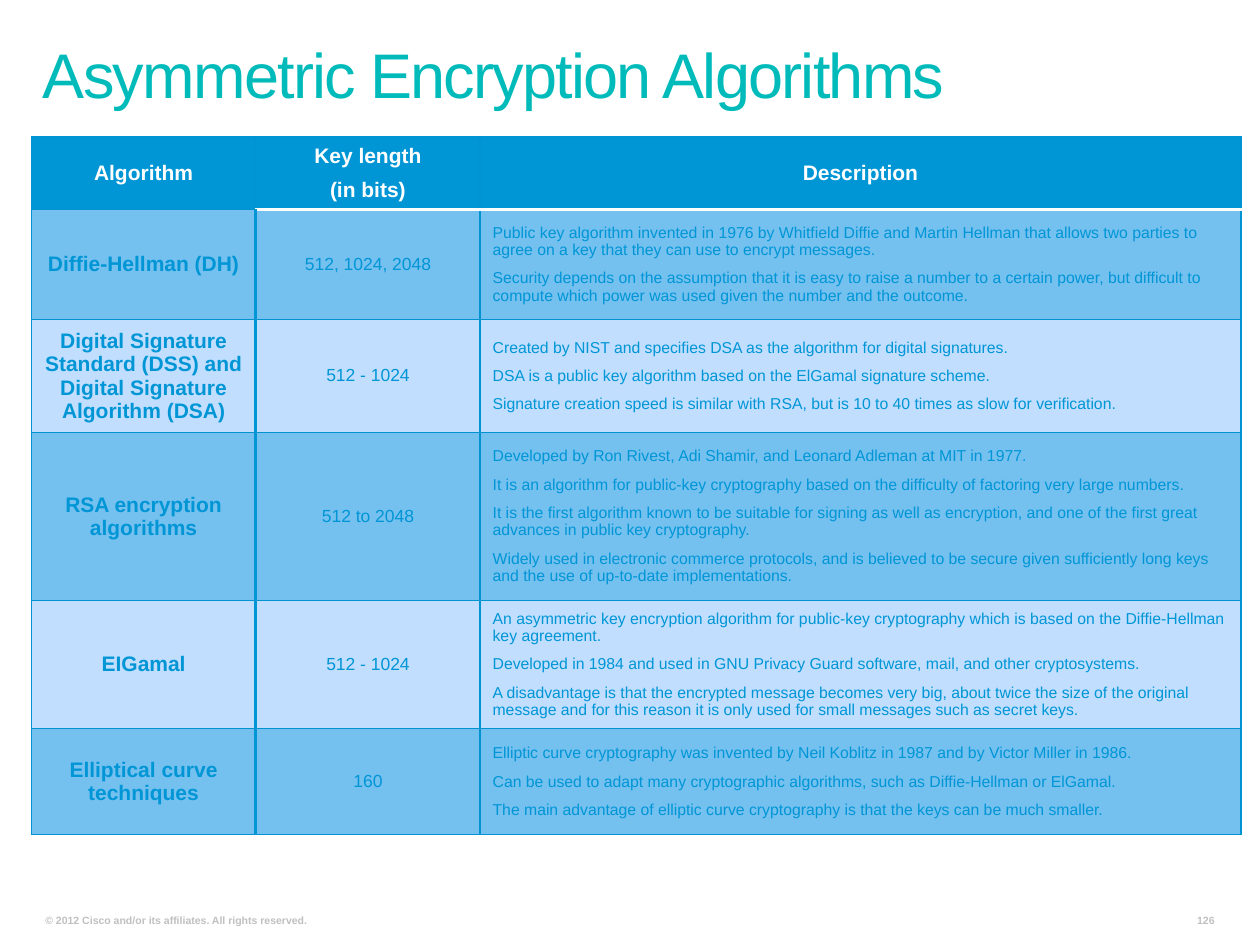
from lxml import etree
from pptx import Presentation
from pptx.dml.color import RGBColor
from pptx.enum.text import MSO_ANCHOR, PP_ALIGN
from pptx.oxml.ns import qn
from pptx.util import Inches, Pt

LEFT, CENTER, RIGHT = PP_ALIGN.LEFT, PP_ALIGN.CENTER, PP_ALIGN.RIGHT
MIDDLE, BOTTOM = MSO_ANCHOR.MIDDLE, MSO_ANCHOR.BOTTOM

BLUE, GRID, WHITE, TEAL, GRAY = "0096D6", "0093D1", "FFFFFF", "01BBBB", "C0C0C0"
BANDS = ("74C0EF", "C1DEFF")

TITLE = "Asymmetric Encryption Algorithms"
COPYRIGHT = "© 2012 Cisco and/or its affiliates. All rights reserved."
PAGE_NUMBER = "126"

# Each row: algorithm, key length, description; every cell is a list of paragraphs
ROWS = [
    (["Algorithm"], ["Key length", "(in bits)"], ["Description"]),
    (["Diffie-Hellman (DH)"], ["512, 1024, 2048"], [
        "Public key algorithm invented in 1976 by Whitfield Diffie and Martin Hellman that allows "
        "two parties to agree on a key that they can use to encrypt messages.",
        "Security depends on the assumption that it is easy to raise a number to a certain power, "
        "but difficult to compute which power was used given the number and the outcome."]),
    (["Digital Signature Standard (DSS) and Digital Signature Algorithm (DSA)"], ["512 - 1024"], [
        "Created by NIST and specifies DSA as the algorithm for digital signatures.",
        "DSA is a public key algorithm based on the ElGamal signature scheme.",
        "Signature creation speed is similar with RSA, but is 10 to 40 times as slow for "
        "verification."]),
    (["RSA encryption algorithms"], ["512 to 2048"], [
        "Developed by Ron Rivest, Adi Shamir, and Leonard Adleman at MIT in 1977.",
        "It is an algorithm for public-key cryptography based on the difficulty of factoring very "
        "large numbers.",
        "It is the first algorithm known to be suitable for signing as well as encryption, and one "
        "of the first great advances in public key cryptography.",
        "Widely used in electronic commerce protocols, and is believed to be secure given "
        "sufficiently long keys and the use of up-to-date implementations."]),
    (["EIGamal"], ["512 - 1024"], [
        "An asymmetric key encryption algorithm for public-key cryptography which is based on the "
        "Diffie-Hellman key agreement.",
        "Developed in 1984 and used in GNU Privacy Guard software, mail, and other cryptosystems.",
        "A disadvantage is that the encrypted message becomes very big, about twice the size of "
        "the original message and for this reason it is only used for small messages such as "
        "secret keys."]),
    (["Elliptical curve techniques"], ["160"], [
        "Elliptic curve cryptography was invented by Neil Koblitz in 1987 and by Victor Miller in "
        "1986.",
        "Can be used to adapt many cryptographic algorithms, such as Diffie-Hellman or ElGamal.",
        "The main advantage of elliptic curve cryptography is that the keys can be much smaller."]),
]
COLUMN_WIDTHS = (1.78, 1.78, 6.04)
ROW_HEIGHTS = (0.47, 0.87, 0.88, 1.33, 0.96, 0.84)
COLUMN_STYLES = ((12, True, CENTER), (10, False, CENTER), (9, False, LEFT))


def rgb(color):
    return RGBColor.from_string(color)


def write(frame, paragraphs, size, color, bold=False, align=LEFT, gap=0):
    """Fill a text frame, with gaps only between paragraphs, and return its last run."""
    for index, text in enumerate(paragraphs):
        paragraph = frame.paragraphs[0] if index == 0 else frame.add_paragraph()
        paragraph.alignment = align
        paragraph.space_before = Pt(gap if index else 0)
        paragraph.space_after = Pt(gap if index < len(paragraphs) - 1 else 0)
        run = paragraph.add_run()
        run.text = text
        font = run.font
        font.name, font.size, font.bold = "Arial", Pt(size), bold
        font.color.rgb = rgb(color)
    return run


def add_text(slide, box, text, size, color, inset=0.09, **style):
    frame = slide.shapes.add_textbox(*map(Inches, box)).text_frame
    frame.word_wrap = True
    frame.vertical_anchor = BOTTOM
    frame.margin_left, frame.margin_right = Inches(inset), Inches(0.09)
    frame.margin_top = frame.margin_bottom = Inches(0.04)
    return frame, write(frame, [text], size, color, **style)


def set_border(cell, side, color, width):
    properties = cell._tc.get_or_add_tcPr()
    line = etree.SubElement(properties, qn(f"a:ln{side}"), w=str(Pt(width)))
    fill = etree.SubElement(line, qn("a:solidFill"))
    etree.SubElement(fill, qn("a:srgbClr"), val=color)


def cell_borders(row, column):
    """Thin grid, white rule under the header, thick rule after the first column."""
    thin, thick, white = (GRID, 0.75), (BLUE, 2), (WHITE, 2)
    return {
        "L": thick if row and column == 1 else thin,
        "R": thick if row and column == 0 else thin,
        "T": white if row == 1 and column else thin,
        "B": white if row == 0 and column else thin,
    }


def add_algorithm_table(slide):
    frame = slide.shapes.add_table(
        len(ROWS), len(COLUMN_WIDTHS), Inches(0.25), Inches(1.08),
        Inches(sum(COLUMN_WIDTHS)), Inches(sum(ROW_HEIGHTS)))
    table = frame.table
    for column, width in zip(table.columns, COLUMN_WIDTHS):
        column.width = Inches(width)
    for row, height in zip(table.rows, ROW_HEIGHTS):
        row.height = Inches(height)
    for r, row in enumerate(ROWS):
        for c, paragraphs in enumerate(row):
            cell = table.cell(r, c)
            cell.vertical_anchor = MIDDLE
            for side, (color, width) in cell_borders(r, c).items():
                set_border(cell, side, color, width)
            cell.fill.solid()
            cell.fill.fore_color.rgb = rgb(BANDS[(r - 1) % 2] if r else BLUE)
            size, bold, align = COLUMN_STYLES[c] if r else (12, True, CENTER)
            write(cell.text_frame, paragraphs, size, BLUE if r else WHITE, bold, align, gap=3)


def main():
    presentation = Presentation()
    presentation.slide_width, presentation.slide_height = Inches(10), Inches(7.5)
    slide = presentation.slides.add_slide(presentation.slide_layouts[6])

    # Footer
    add_text(slide, (0.27, 7.2, 3.74, 0.19), COPYRIGHT, 6, GRAY, bold=True)
    add_text(slide, (9.45, 7.2, 0.28, 0.19), PAGE_NUMBER, 6, GRAY, inset=0, bold=True, align=RIGHT)

    # Title with tightened letters
    frame, run = add_text(slide, (0.25, 0.17, 9.39, 0.75), TITLE, 36, TEAL)
    frame.paragraphs[0].line_spacing = 0.8
    run.font._element.set("spc", "-100")

    add_algorithm_table(slide)
    presentation.save("out.pptx")


if __name__ == "__main__":
    main()
